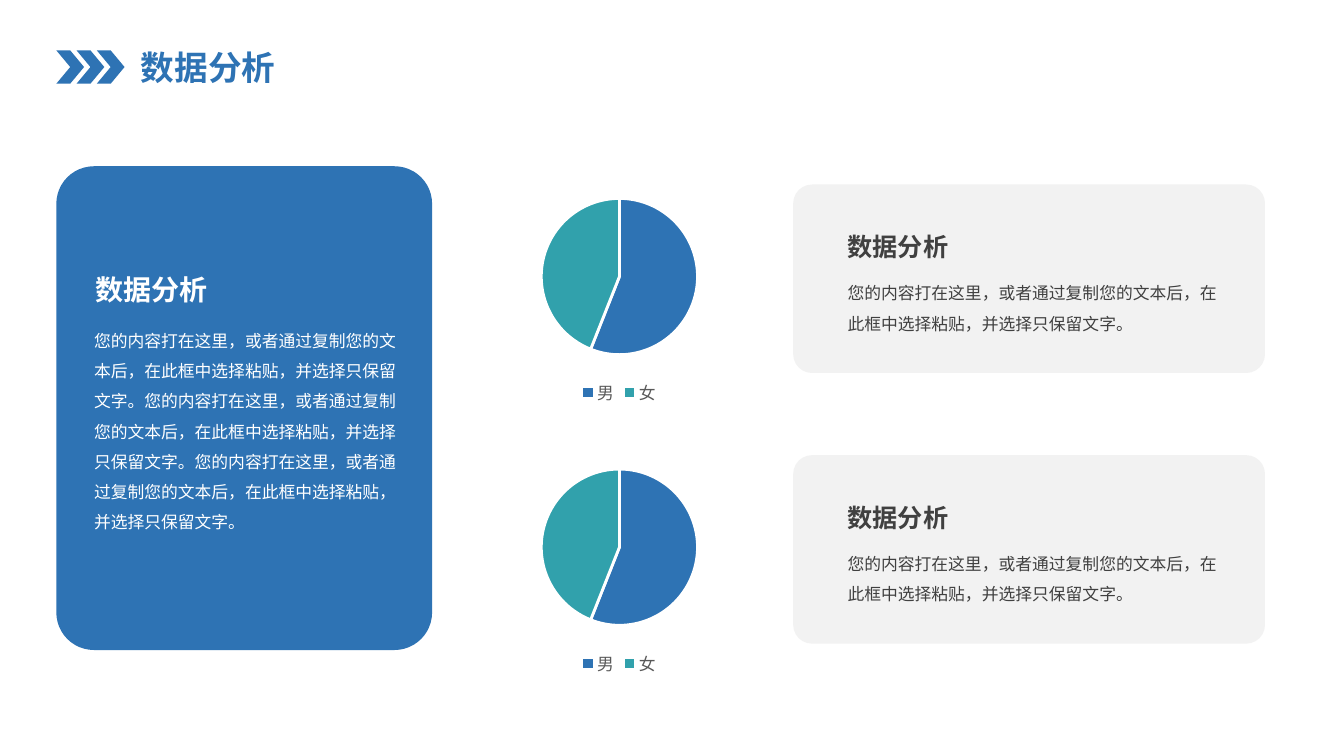
from dataclasses import dataclass

from lxml.etree import SubElement
from pptx import Presentation
from pptx.chart.data import CategoryChartData
from pptx.dml.color import RGBColor
from pptx.enum.chart import XL_CHART_TYPE as ChartType, XL_LEGEND_POSITION as LegendPosition
from pptx.enum.shapes import MSO_SHAPE as Preset
from pptx.enum.text import MSO_AUTO_SIZE as AutoSize
from pptx.oxml.ns import qn
from pptx.util import Cm, Pt


@dataclass(frozen=True)
class Theme:
    font: str = "Noto Sans CJK SC"
    blue: RGBColor = RGBColor(0x2E, 0x73, 0xB4)
    teal: RGBColor = RGBColor(0x31, 0xA1, 0xAC)
    white: RGBColor = RGBColor(0xFF, 0xFF, 0xFF)
    pale: RGBColor = RGBColor(0xF2, 0xF2, 0xF2)
    dark: RGBColor = RGBColor(0x40, 0x40, 0x40)
    legend: RGBColor = RGBColor(0x59, 0x59, 0x59)
    title: Pt = Pt(24)
    panel_heading: Pt = Pt(20)
    card_heading: Pt = Pt(18)
    body: Pt = Pt(12)


THEME = Theme()
HEADING = "数据分析"
SENTENCE = "您的内容打在这里，或者通过复制您的文本后，在此框中选择粘贴，并选择只保留文字。"
GENDER_SHARE = {"男": 56, "女": 44}
ROW_TOP, ROW_PITCH = 4.65, 6.82


def add_filled(shapes, preset, left, top, width, height, color):
    shape = shapes.add_shape(preset, Cm(left), Cm(top), Cm(width), Cm(height))
    shape.shadow.inherit = False
    shape.fill.solid()
    shape.fill.fore_color.rgb = color
    shape.line.fill.background()
    return shape


def add_rounded(slide, left, top, width, height, color):
    add_filled(slide.shapes, Preset.ROUNDED_RECTANGLE,
               left, top, width, height, color).adjustments[0] = 0.1


def add_text(slide, text, left, top, width, height, size, color,
             bold=False, spacing=None, inset=0, wrap=True):
    box = slide.shapes.add_textbox(Cm(left), Cm(top), Cm(width), Cm(height))
    frame = box.text_frame
    frame.text = text
    frame.word_wrap = wrap
    frame.auto_size = AutoSize.SHAPE_TO_FIT_TEXT
    frame.margin_left = frame.margin_right = Cm(inset)
    frame.margin_top = frame.margin_bottom = Cm(inset / 2)
    paragraph = frame.paragraphs[0]
    paragraph.line_spacing = spacing
    font = paragraph.runs[0].font
    font.name, font.size, font.bold = THEME.font, size, bold
    font.color.rgb = color
    set_east_asian(font)


def set_east_asian(font):
    """Use the theme font for Chinese characters as well as Latin ones."""
    SubElement(font._element.get_or_add_rPr() if hasattr(font._element, "get_or_add_rPr")
               else font._element, qn("a:ea")).set("typeface", THEME.font)


def add_title(slide, left, top):
    arrows = slide.shapes.add_group_shape()
    for index in range(3):
        add_filled(arrows.shapes, Preset.CHEVRON,
                   left + 0.51 * index, top, 0.7, 0.84, THEME.blue)
    add_text(slide, HEADING, left + 1.88, top - 0.2, 3.94, 1.27,
             THEME.title, THEME.blue, bold=True, inset=0.25, wrap=False)


def add_panel(slide, left, top, width, height):
    add_rounded(slide, left, top, width, height, THEME.blue)
    add_text(slide, HEADING, left + 0.99, top + 2.67, 4.06, 0.86,
             THEME.panel_heading, THEME.white, bold=True)
    add_text(slide, SENTENCE * 3, left + 0.95, top + 3.89, width - 1.8, 5.28,
             THEME.body, THEME.white, spacing=1.5)


def add_card(slide, left, top, width, height):
    add_rounded(slide, left, top, width, height, THEME.pale)
    add_text(slide, HEADING, left + 1.37, top + 1.19, 3.68, 0.76,
             THEME.card_heading, THEME.dark, bold=True)
    add_text(slide, SENTENCE, left + 1.37, top + 2.23, width - 2.42, 1.55,
             THEME.body, THEME.dark, spacing=1.5)


def add_gender_pie(slide, left, top, width, height):
    data = CategoryChartData()
    data.categories = list(GENDER_SHARE)
    data.add_series("Series 1", list(GENDER_SHARE.values()))
    chart = slide.shapes.add_chart(
        ChartType.PIE, Cm(left), Cm(top), Cm(width), Cm(height), data).chart
    chart.has_title = False
    chart.font.name, chart.font.size = THEME.font, THEME.body
    chart.has_legend = True
    legend = chart.legend
    legend.position = LegendPosition.BOTTOM
    legend.include_in_layout = False
    legend.font.name, legend.font.size = THEME.font, THEME.body
    legend.font.color.rgb = THEME.legend
    for font in (chart.font, legend.font):
        set_east_asian(font)
    plot = chart.plots[0]
    plot.vary_by_categories = True
    for index, color in enumerate((THEME.blue, THEME.teal)):
        slice_format = plot.series[0].points[index].format
        slice_format.fill.solid()
        slice_format.fill.fore_color.rgb = color
        slice_format.line.color.rgb = THEME.white
        slice_format.line.width = Pt(2)


def main():
    deck = Presentation()
    deck.slide_width, deck.slide_height = Cm(33.87), Cm(19.05)
    slide = deck.slides.add_slide(deck.slide_layouts[6])
    add_title(slide, 1.42, 1.27)
    add_panel(slide, 1.42, 4.19, 9.47, 12.19)
    for row in range(2):
        top = ROW_TOP + ROW_PITCH * row
        add_gender_pie(slide, 10.9, top, 9.42, 5.66)
        add_card(slide, 19.99, top, 11.89, 4.75)
    deck.save("out.pptx")


if __name__ == "__main__":
    main()
